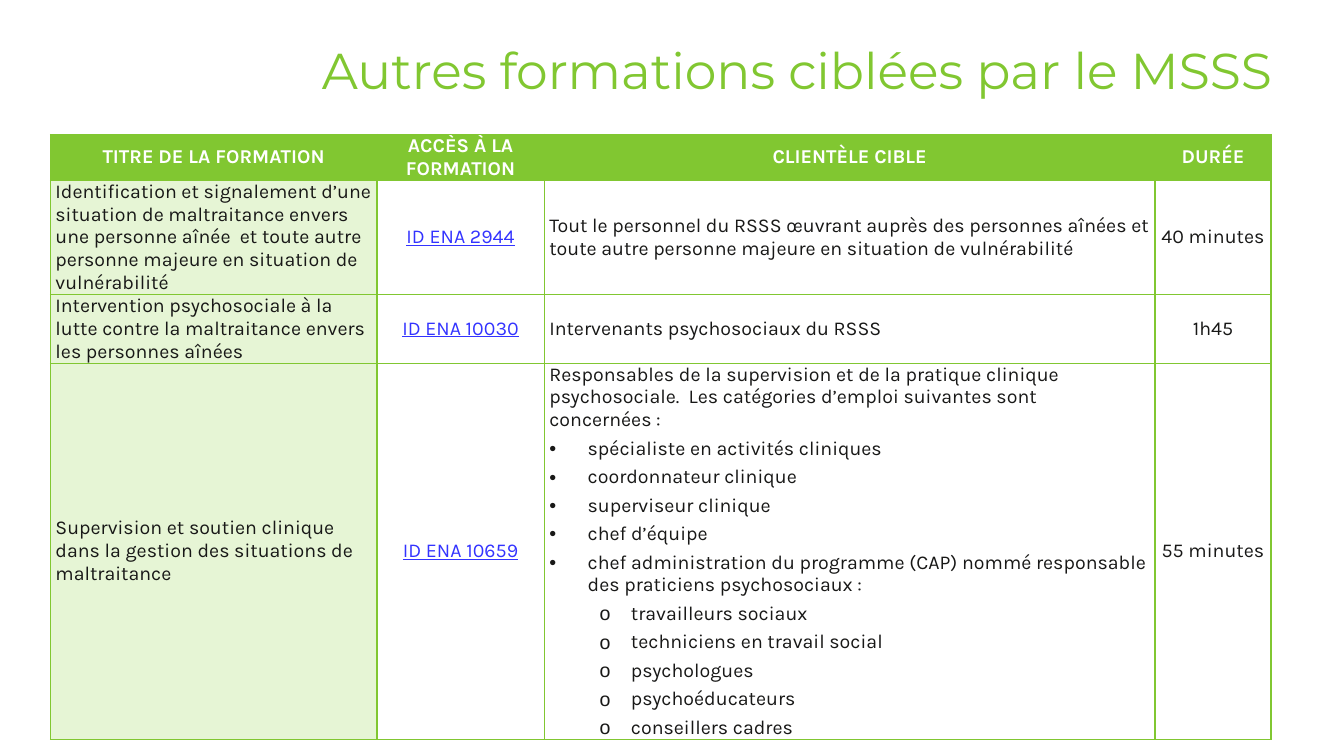
from lxml.etree import SubElement
from pptx import Presentation
from pptx.dml.color import RGBColor
from pptx.enum.text import MSO_ANCHOR, PP_ALIGN
from pptx.oxml import parse_xml
from pptx.oxml.ns import nsdecls, qn
from pptx.util import Pt

GREEN, PALE_GREEN, WHITE = "81C731", "E6F5D5", "FFFFFF"
DARK, LINK_BLUE = "181817", "3333FF"

COLUMN_WIDTHS = [233.3, 119.5, 436.3, 82.8]
ROW_HEIGHTS = [32, 81, 48, 268]

# Bullet character, left margin and hanging indent for each list level
BULLETS = [("•", 27.4, -27.4), ("o", 58.3, -22.3)]

HEADERS = ["TITRE DE LA FORMATION", "ACCÈS À LA FORMATION", "CLIENTÈLE CIBLE", "DURÉE"]

# Title, access, audience (text, list level) and duration of each course
COURSES = [
    ("Identification et signalement d’une situation de maltraitance envers une personne "
     "aînée  et toute autre personne majeure en situation de vulnérabilité",
     "ID ENA 2944",
     [("Tout le personnel du RSSS œuvrant auprès des personnes aînées et toute autre "
       "personne majeure en situation de vulnérabilité", None)],
     "40 minutes"),
    ("Intervention psychosociale à la lutte contre la maltraitance envers les personnes aînées",
     "ID ENA 10030",
     [("Intervenants psychosociaux du RSSS", None)],
     "1h45"),
    ("Supervision et soutien clinique dans la gestion des situations de maltraitance",
     "ID ENA 10659",
     [("Responsables de la supervision et de la pratique clinique psychosociale.  "
       "Les catégories d’emploi suivantes sont concernées :", None),
      ("spécialiste en activités cliniques", 0),
      ("coordonnateur clinique", 0),
      ("superviseur clinique", 0),
      ("chef d’équipe", 0),
      ("chef administration du programme (CAP) nommé responsable des praticiens "
       "psychosociaux :", 0),
      ("travailleurs sociaux", 1),
      ("techniciens en travail social", 1),
      ("psychologues", 1),
      ("psychoéducateurs", 1),
      ("conseillers cadres", 1)],
     "55 minutes"),
]


def color(hex_string):
    return RGBColor.from_string(hex_string)


class SlideBuilder:
    title_font, body_font = "Montserrat", "Karla"
    title_size, body_size = 36, 14

    def __init__(self, presentation):
        self.slide = presentation.slides.add_slide(presentation.slide_layouts[5])

    def run(self, paragraph, text, font_name, size, hex_color, bold=False, underline=False):
        run = paragraph.add_run()
        run.text = text
        font = run.font
        font.name, font.size = font_name, Pt(size)
        font.bold, font.underline = bold, underline
        font.color.rgb = color(hex_color)

    def title(self, text, left, top, width, height):
        shape = self.slide.shapes.title
        shape.left, shape.top, shape.width, shape.height = map(Pt, (left, top, width, height))
        frame = shape.text_frame
        frame.word_wrap = True
        frame.vertical_anchor = MSO_ANCHOR.MIDDLE
        paragraph = frame.paragraphs[0]
        paragraph.alignment = PP_ALIGN.RIGHT
        paragraph.line_spacing = 0.9
        self.run(paragraph, text, self.title_font, self.title_size, GREEN)

    def table(self, left, top, column_widths, row_heights):
        table = self.slide.shapes.add_table(
            len(row_heights), len(column_widths), Pt(left), Pt(top),
            Pt(sum(column_widths)), Pt(sum(row_heights))).table
        table.horz_banding = False
        for column, width in zip(table.columns, column_widths):
            column.width = Pt(width)
        for row, height in zip(table.rows, row_heights):
            row.height = Pt(height)
        return table

    def bullet(self, paragraph, level):
        character, margin, indent = BULLETS[level]
        paragraph.level = level
        properties = paragraph._p.get_or_add_pPr()
        properties.set("marL", str(Pt(margin)))
        properties.set("indent", str(Pt(indent)))
        SubElement(properties, qn("a:buFont"), typeface="Arial")
        SubElement(properties, qn("a:buChar"), char=character)

    def cell(self, cell, items, fill, hex_color=DARK, centered=False, **style):
        # Borders come before the fill in the cell properties
        properties = cell._tc.get_or_add_tcPr()
        for side in "LRTB":
            properties.append(parse_xml(
                f'<a:ln{side} {nsdecls("a")} w="{Pt(1)}"><a:solidFill>'
                f'<a:srgbClr val="{GREEN}"/></a:solidFill></a:ln{side}>'))
        cell.fill.solid()
        cell.fill.fore_color.rgb = color(fill)
        cell.vertical_anchor = MSO_ANCHOR.MIDDLE
        cell.margin_left = cell.margin_right = Pt(3.6)
        cell.margin_top = cell.margin_bottom = 0
        frame = cell.text_frame
        for index, (text, level) in enumerate(items):
            paragraph = frame.add_paragraph() if index else frame.paragraphs[0]
            if level is not None:
                self.bullet(paragraph, level)
            paragraph.alignment = PP_ALIGN.CENTER if centered else PP_ALIGN.LEFT
            paragraph.space_after = Pt(4)
            self.run(paragraph, text, self.body_font, self.body_size, hex_color, **style)


def main():
    presentation = Presentation()
    presentation.slide_width, presentation.slide_height = Pt(960), Pt(540)
    builder = SlideBuilder(presentation)

    # Title
    builder.title("Autres formations ciblées par le MSSS", 43.9, 0, 871.9, 104.4)

    # Table header
    table = builder.table(36, 96, COLUMN_WIDTHS, ROW_HEIGHTS)
    for column, header in enumerate(HEADERS):
        builder.cell(table.cell(0, column), [(header, None)], GREEN, WHITE,
                     centered=True, bold=True)

    # One row per course
    for row, (name, access, audience, duration) in enumerate(COURSES, start=1):
        builder.cell(table.cell(row, 0), [(name, None)], PALE_GREEN)
        builder.cell(table.cell(row, 1), [(access, None)], WHITE, LINK_BLUE,
                     centered=True, underline=True)
        builder.cell(table.cell(row, 2), audience, WHITE)
        builder.cell(table.cell(row, 3), [(duration, None)], WHITE, centered=True)

    presentation.save("out.pptx")


if __name__ == "__main__":
    main()
